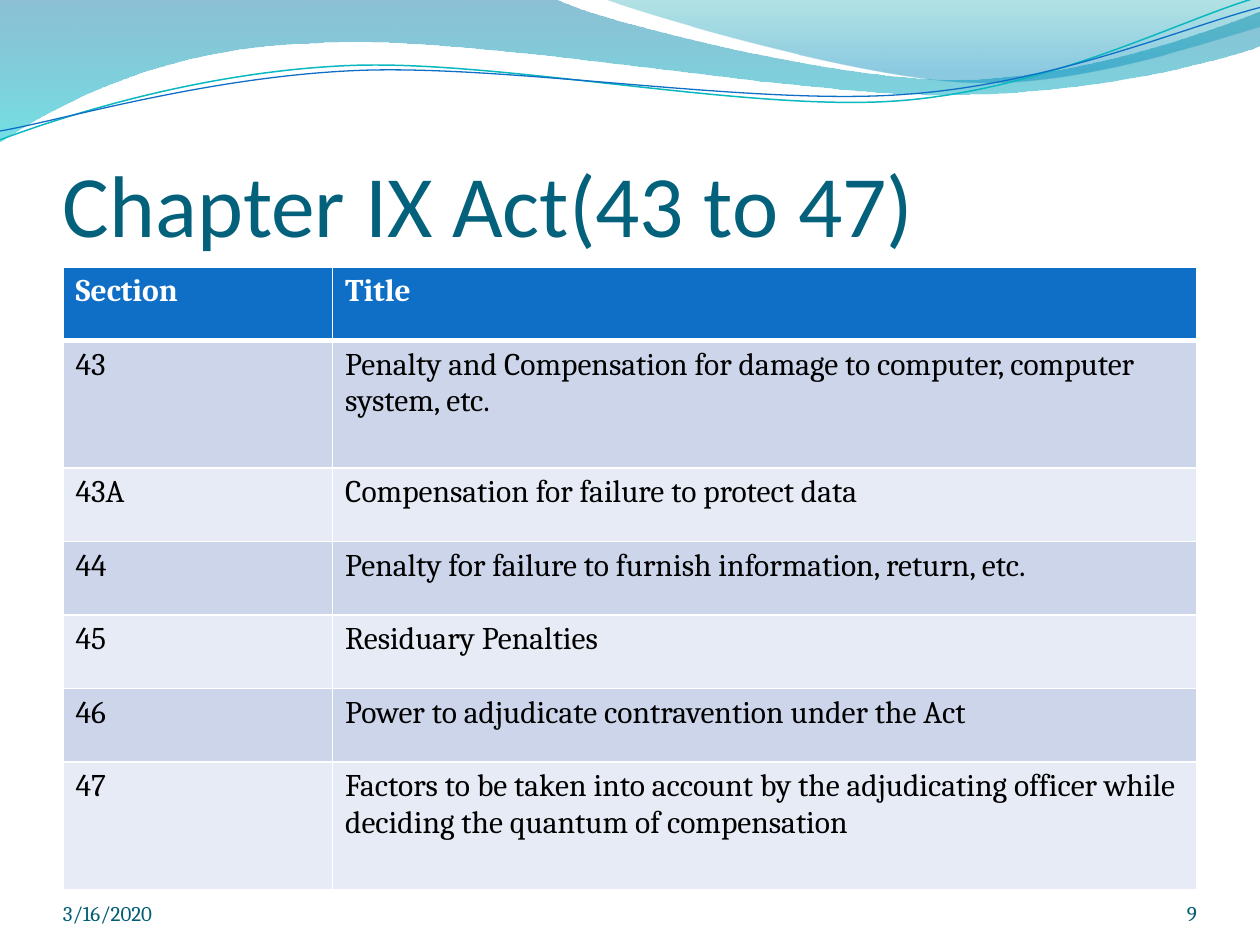
from math import cos, radians, sin

from lxml import etree
from pptx import Presentation
from pptx.dml.color import RGBColor
from pptx.enum.text import MSO_ANCHOR, PP_ALIGN
from pptx.oxml.ns import qn
from pptx.util import Inches, Pt

WHITE = RGBColor(0xFF, 0xFF, 0xFF)
BLACK = RGBColor(0, 0, 0)
BLUE = RGBColor(0x0F, 0x6F, 0xC6)
TEAL = RGBColor(0x0A, 0xB8, 0xBF)
TITLE_COLOR = RGBColor(0x04, 0x61, 0x7B)
FOOTER_COLOR = RGBColor(0x04, 0x5D, 0x75)
BANDS = [RGBColor(0xCC, 0xD5, 0xEA), RGBColor(0xE7, 0xEB, 0xF5)]
TILT = 2.7

deck = Presentation()
deck.slide_width, deck.slide_height = Inches(10), Inches(7.5)
page = deck.slides.add_slide(deck.slide_layouts[6])


def add_curve(start, segments, closed):
    """Draw segments of one point (straight) or three points (cubic Bezier)."""
    corners = [(Inches(x), Inches(y)) for segment in segments for x, y in segment]
    builder = page.shapes.build_freeform(*map(Inches, start), scale=1.0)
    builder.add_line_segments(corners, close=closed)
    shape = builder.convert_to_shape()
    shape.shadow.inherit = False
    strokes = iter(list(shape._element.iter(qn("a:lnTo"))))
    for segment in segments:
        parts = [next(strokes) for _ in segment]
        if len(parts) == 3:
            bezier = etree.Element(qn("a:cubicBezTo"))
            parts[0].addprevious(bezier)
            for part in parts:
                bezier.append(part[0])
                part.getparent().remove(part)
    return shape


def write(frame, words, size=18, font="Cambria", color=BLACK, bold=False,
          align=PP_ALIGN.LEFT):
    para = frame.paragraphs[0]
    para.alignment = align
    span = para.add_run()
    span.text = words
    span.font.size, span.font.name, span.font.bold = Pt(size), font, bold
    span.font.color.rgb = color


# Translucent waves: start, segments, gradient stops (position, colour, opacity %)
waves = [
    ((0, 0),
     [[(4.4, -0.01)],
      [(4.76, 0.17), (6.64, 0.63), (7.58, 0.63)],
      [(8.53, 0.63), (9.58, 0.26), (10, 0.09)],
      [(10.01, 0.36)],
      [(9.83, 0.44), (8.7, 0.76), (7.46, 0.75)],
      [(6.22, 0.75), (3.82, 0.28), (2.57, 0.34)],
      [(1.29, 0.36), (0.46, 0.83), (-0.01, 1.13)],
      [(0, 0)]],
     [(0, RGBColor(0x00, 0x74, 0xA1), 45), (1, RGBColor(0x00, 0xC6, 0xCF), 55)]),
    ((4.79, -0.01),
     [[(5.09, 0.11), (6.82, 0.62), (7.69, 0.65)],
      [(8.56, 0.69), (9.61, 0.32), (10, 0.21)],
      [(10, 0)],
      [(4.79, -0.01)]],
     [(0, RGBColor(0x00, 0xA1, 0xA9), 30), (0.8, RGBColor(0x00, 0x8B, 0xBF), 45)]),
]
for start, segments, stops in waves:
    wave = add_curve(start, segments, closed=True)
    wave.line.fill.background()
    wave.fill.gradient()
    wave.fill.gradient_angle = 270
    for stop, (position, color, _) in zip(wave.fill.gradient_stops, stops):
        stop.position = position
        stop.color.rgb = color
    tints = wave._element.spPr.iter(qn("a:srgbClr"))
    for tint, (_, _, opacity) in zip(tints, stops):
        etree.SubElement(tint, qn("a:alpha"), val=str(opacity * 1000))

# Ripples: points as seen, laid level around the centre and then tilted back
ripples = [
    ((4.99, 0.57), (0, 1.11),
     [[(0.48, 0.93), (1.58, 0.57), (2.77, 0.52)],
      [(3.95, 0.47), (5.93, 0.89), (7.13, 0.8)],
      [(8.33, 0.71), (9.38, 0.15), (9.98, -0.02)]], TEAL, 0.85),
    ((5, 0.59), (0, 1.04),
     [[(0.47, 0.96), (1.64, 0.61), (2.83, 0.56)],
      [(4.03, 0.51), (5.97, 0.84), (7.17, 0.75)],
      [(8.36, 0.67), (9.41, 0.21), (10, 0.06)]], BLUE, 0.75),
]
cosine, sine = cos(radians(TILT)), sin(radians(TILT))
for (center_x, center_y), start, segments, color, width in ripples:
    level = [[(center_x + (x - center_x) * cosine - (y - center_y) * sine,
               center_y + (x - center_x) * sine + (y - center_y) * cosine)
              for x, y in segment] for segment in [[start], *segments]]
    ripple = add_curve(level[0][0], level[1:], closed=False)
    ripple.rotation = -TILT
    ripple.fill.background()
    ripple.line.color.rgb = color
    ripple.line.width = Pt(width)

# Title, date and page number
captions = [
    ((0.5, 0.77, 9, 1.25), 0.05, "Chapter IX Act(43 to 47)",
     dict(size=50, font="Calibri", color=TITLE_COLOR)),
    ((0.5, 6.95, 2.33, 0.4), 0, "3/16/2020", dict(size=12, color=FOOTER_COLOR)),
    ((8.67, 6.95, 0.83, 0.4), 0, "9",
     dict(size=12, color=FOOTER_COLOR, align=PP_ALIGN.RIGHT)),
]
for place, top_inset, words, style in captions:
    frame = page.shapes.add_textbox(*map(Inches, place)).text_frame
    frame.word_wrap = True
    frame.vertical_anchor = MSO_ANCHOR.BOTTOM
    frame.margin_left = frame.margin_right = frame.margin_bottom = 0
    frame.margin_top = Inches(top_inset)
    write(frame, words, **style)

# Table of sections
sections = [
    ("Section", "Title"),
    ("43", "Penalty and Compensation for damage to computer, computer system, etc."),
    ("43A", "Compensation for failure to protect data"),
    ("44", "Penalty for failure to furnish information, return, etc."),
    ("45", "Residuary Penalties"),
    ("46", "Power to adjudicate contravention under the Act"),
    ("47", "Factors to be taken into account by the adjudicating officer while "
           "deciding the quantum of compensation"),
]
TABLE_HEIGHT, TALL_ROW, TALL_ROWS = 4.94, 1.01, (1, 6)
SHORT_ROW = (TABLE_HEIGHT - 2 * TALL_ROW) / 5
table = page.shapes.add_table(len(sections), 2, Inches(0.5), Inches(2.12),
                              Inches(9), Inches(TABLE_HEIGHT)).table
for column, width in zip(table.columns, (2.14, 6.86)):
    column.width = Inches(width)
for row_index, entries in enumerate(sections):
    table.rows[row_index].height = Inches(TALL_ROW if row_index in TALL_ROWS else SHORT_ROW)
    header = row_index == 0
    for column_index, words in enumerate(entries):
        cell = table.cell(row_index, column_index)
        cell.fill.solid()
        cell.fill.fore_color.rgb = BLUE if header else BANDS[(row_index - 1) % 2]
        write(cell.text_frame, words, color=WHITE if header else BLACK, bold=header)
        borders = {"L": 1, "R": 1, "T": 3 if row_index == 1 else 1, "B": 3 if header else 1}
        properties = cell._tc.get_or_add_tcPr()
        for order, (side, width) in enumerate(borders.items()):
            border = etree.Element(qn(f"a:ln{side}"), w=str(Pt(width)))
            paint = etree.SubElement(border, qn("a:solidFill"))
            etree.SubElement(paint, qn("a:srgbClr"), val=str(WHITE))
            properties.insert(order, border)

deck.save("out.pptx")
